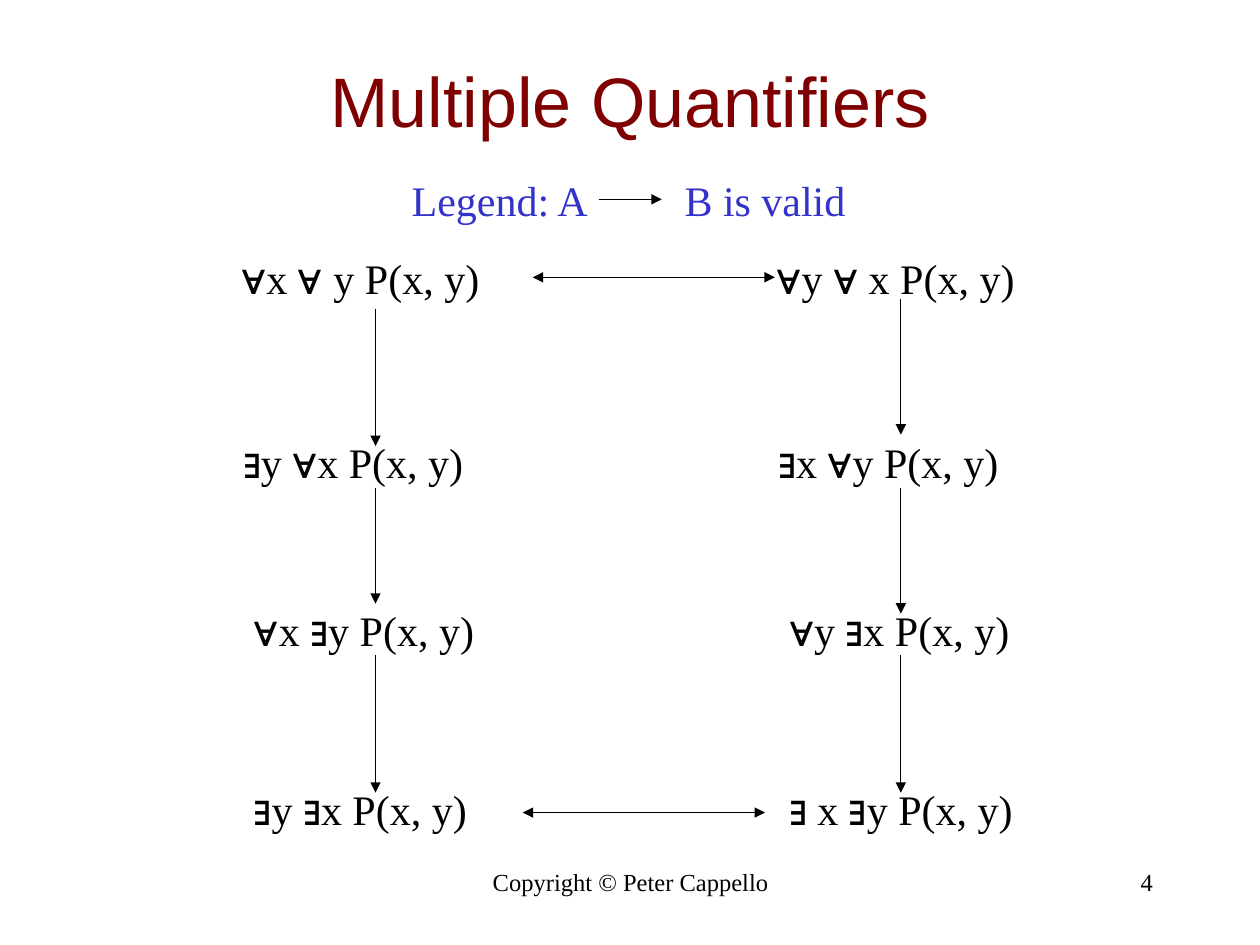
from dataclasses import dataclass

from lxml.etree import SubElement
from pptx import Presentation
from pptx.dml.color import RGBColor
from pptx.enum.shapes import MSO_CONNECTOR
from pptx.enum.text import MSO_ANCHOR, MSO_AUTO_SIZE, PP_ALIGN as Align
from pptx.oxml.ns import qn
from pptx.util import Cm, Pt


@dataclass(frozen=True)
class Theme:
    title_font: str = "Arial"
    body_font: str = "Times New Roman"
    title_color: str = "7F0000"
    legend_color: str = "3333CC"
    ink: str = "000000"
    title_size: int = 40
    body_size: int = 24
    footer_size: int = 14
    line_width: float = 0.75


THEME = Theme()
BOX_HEIGHT = 1.27
COLUMN_GAP = 10.79

# Left edge in the first column, top, width, formula in each column
FORMULAS = [
    (4.62, 4.96, 5.6, "∀x ∀ y P(x, y)", "∀y ∀ x P(x, y)"),
    (4.65, 8.68, 5.2, "∃y ∀x P(x, y)", "∃x ∀y P(x, y)"),
    (4.87, 12.07, 5.2, "∀x ∃y P(x, y)", "∀y ∃x P(x, y)"),
    (4.87, 15.67, 5.25, "∃y ∃x P(x, y)", "∃ x ∃y P(x, y)"),
]

# Column centre -> top and bottom of each implication
IMPLICATIONS = {
    7.57: [(6.22, 8.99), (9.83, 12.17), (13.21, 15.98)],
    18.16: [(6.02, 8.76), (9.83, 12.37), (13.21, 15.98)],
}
EQUIVALENCES = [(10.74, 15.62, 5.59), (10.54, 15.42, 16.38)]


def set_attributes(target, values):
    for name, value in values.items():
        setattr(target, name, value)


def write_text(shape, text, size, color, font=THEME.body_font, align=Align.LEFT):
    paragraph = shape.text_frame.paragraphs[0]
    paragraph.alignment = align
    run = paragraph.add_run()
    run.text = text
    set_attributes(run.font, {"name": font, "size": Pt(size)})
    run.font.color.rgb = RGBColor.from_string(color)


def add_title(slide, text):
    title = slide.shapes.title
    set_attributes(title, {"left": Cm(1.9), "top": Cm(0.42),
                           "width": Cm(21.6), "height": Cm(3.18)})
    title.text_frame.vertical_anchor = MSO_ANCHOR.MIDDLE
    write_text(title, text, THEME.title_size, THEME.title_color,
               THEME.title_font, Align.CENTER)


def add_label(slide, text, left, top, width, color=THEME.ink):
    """Add a one-line text box that fits its text."""
    box = slide.shapes.add_textbox(Cm(left), Cm(top), Cm(width), Cm(BOX_HEIGHT))
    set_attributes(box.text_frame, {"word_wrap": False,
                                    "auto_size": MSO_AUTO_SIZE.SHAPE_TO_FIT_TEXT})
    write_text(box, text, THEME.body_size, color)


def add_footer(slide, text, left, width, align):
    box = slide.shapes.add_textbox(Cm(left), Cm(17.35), Cm(width), Cm(BOX_HEIGHT))
    box.text_frame.word_wrap = True
    write_text(box, text, THEME.footer_size, THEME.ink, align=align)


def add_arrow(slide, start, end, both_ways=False):
    arrow = slide.shapes.add_connector(
        MSO_CONNECTOR.STRAIGHT, *(Cm(value) for value in (*start, *end)))
    arrow.line.width = Pt(THEME.line_width)
    arrow.line.color.rgb = RGBColor.from_string(THEME.ink)
    line = arrow.line._get_or_add_ln()
    for tag in ("a:headEnd", "a:tailEnd") if both_ways else ("a:tailEnd",):
        SubElement(line, qn(tag), type="triangle")
    SubElement(line.getparent(), qn("a:effectLst"))


def add_legend(slide):
    add_label(slide, "Legend: A", 8.05, 3.39, 4.4, THEME.legend_color)
    add_arrow(slide, (12.07, 4.02), (13.34, 4.02))
    add_label(slide, "B is valid", 13.55, 3.39, 3.85, THEME.legend_color)


def add_diagram(slide):
    for left, top, width, *formulas in FORMULAS:
        for column, formula in enumerate(formulas):
            add_label(slide, formula, left + column * COLUMN_GAP, top, width)
    for left, right, y in EQUIVALENCES:
        add_arrow(slide, (left, y), (right, y), both_ways=True)
    for x, spans in IMPLICATIONS.items():
        for top, bottom in spans:
            add_arrow(slide, (x, top), (x, bottom))


def main():
    presentation = Presentation()
    set_attributes(presentation, {"slide_width": Cm(25.4), "slide_height": Cm(19.05)})
    slide = presentation.slides.add_slide(presentation.slide_layouts[5])
    add_footer(slide, "Copyright © Peter Cappello", 8.69, 8.05, Align.CENTER)
    add_footer(slide, "4", 18.21, 5.28, Align.RIGHT)
    add_title(slide, "Multiple Quantifiers")
    add_diagram(slide)
    add_legend(slide)
    presentation.save("out.pptx")


if __name__ == "__main__":
    main()
